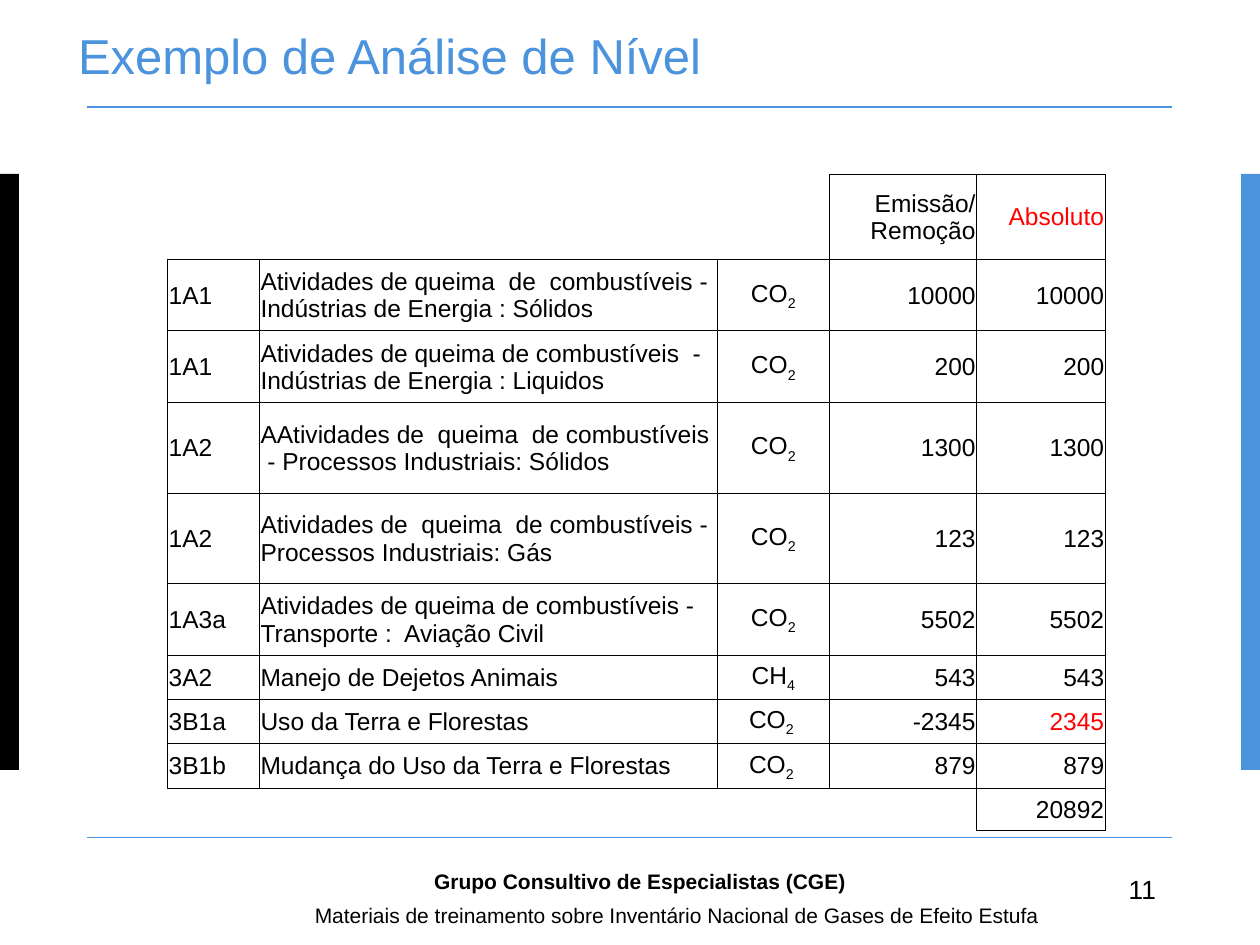
from dataclasses import dataclass

from lxml import etree
from pptx import Presentation
from pptx import util as u
from pptx.dml.color import RGBColor
from pptx.enum import shapes, text
from pptx.oxml import ns

Pt = u.Pt
LEFT, MID, RIGHT = text.PP_ALIGN.LEFT, text.PP_ALIGN.CENTER, text.PP_ALIGN.RIGHT


@dataclass(frozen=True)
class Theme:
    font: str = "Arial"
    blue: str = "4B93DC"
    black: str = "000000"
    red: str = "FF0000"
    title: int = 28
    page: int = 15
    body: int = 14
    foot: int = 12


T = Theme()
COLS = [52.5, 261.5, 64.5, 84, 73.5]
ROWS = [48.4, 41, 41, 51.7, 51.7, 41, 25.3, 25.3, 25.3, 24]
DATA = [
    ("1A1 ", "Atividades de queima  de  combustíveis - Indústrias de Energia : Sólidos", "CO", "2", 10000),
    ("1A1 ", "Atividades de queima de combustíveis  - Indústrias de Energia : Liquidos", "CO", "2", 200),
    ("1A2 ", "AAtividades de  queima  de combustíveis  - Processos Industriais: Sólidos", "CO", "2", 1300),
    ("1A2 ", "Atividades de  queima  de combustíveis - Processos Industriais: Gás", "CO", "2", 123),
    ("1A3a ", "Atividades de queima de combustíveis -  Transporte :  Aviação Civil", "CO", "2", 5502),
    ("3A2 ", "Manejo de Dejetos Animais", "CH", "4", 543),
    ("3B1a ", "Uso da Terra e Florestas", "CO", "2 ", -2345),
    ("3B1b ", "Mudança do Uso da Terra e Florestas", "CO", "2 ", 879),
]


def say(frame, words, size=T.body, color=T.black, bold=False, align=LEFT, sub="", lead=None):
    para = frame.paragraphs[0]
    para.alignment = align
    if lead:
        para.line_spacing = Pt(lead)
    for part in filter(None, (words, sub)):
        run = para.add_run()
        run.text = part
        run.font.name, run.font.size, run.font.bold = T.font, Pt(size), bold
        run.font.color.rgb = RGBColor.from_string(color)
    if sub:
        run.font._element.set("baseline", "-25000")


def add_bar(slide, x, color):
    bar = slide.shapes.add_shape(shapes.MSO_SHAPE.RECTANGLE, Pt(x), Pt(99.4), Pt(10.8), Pt(340.6))
    bar.shadow.inherit = False
    bar.fill.solid()
    bar.fill.fore_color.rgb = RGBColor.from_string(color)
    bar.line.fill.background()


def add_rule(slide, y):
    rule = slide.shapes.add_connector(shapes.MSO_CONNECTOR.STRAIGHT, Pt(49.7), Pt(y), Pt(669.6), Pt(y))
    rule.line.color.rgb = RGBColor.from_string(T.blue)
    rule.line.width = Pt(1)
    etree.SubElement(rule._element.spPr, ns.qn("a:effectLst"))


def add_note(slide, box, words, **style):
    frame = slide.shapes.add_textbox(*map(Pt, box)).text_frame
    frame.word_wrap = True
    say(frame, words, **style)


def set_edge(cell, side, shown):
    props = cell._tc.get_or_add_tcPr()
    edge = etree.SubElement(props, ns.qn("a:ln" + side), w=str(Pt(0.5)))
    if shown:
        fill = etree.SubElement(edge, ns.qn("a:solidFill"))
        etree.SubElement(fill, ns.qn("a:srgbClr"), val=T.black)
    else:
        etree.SubElement(edge, ns.qn("a:noFill"))


def list_cells():
    cells = {
        (0, 3): dict(words="Emissão/ Remoção", align=RIGHT),
        (0, 4): dict(words="Absoluto", align=RIGHT, color=T.red),
    }
    for row, (code, name, gas, sub, value) in enumerate(DATA, 1):
        cells[row, 0] = dict(words=code)
        cells[row, 1] = dict(words=name)
        cells[row, 2] = dict(words=gas, sub=sub, align=MID)
        cells[row, 3] = dict(words=str(value), align=RIGHT)
        cells[row, 4] = dict(words=str(abs(value)), align=RIGHT, color=T.red if value < 0 else T.black)
    total = sum(abs(item[-1]) for item in DATA)
    cells[len(DATA) + 1, 4] = dict(words=str(total), align=RIGHT)
    return cells


def add_grid(slide):
    size = Pt(sum(COLS)), Pt(sum(ROWS))
    grid = slide.shapes.add_table(len(ROWS), len(COLS), Pt(95.7), Pt(99.7), *size).table
    grid.first_row = grid.horz_banding = False
    for col, width in zip(grid.columns, COLS):
        col.width = Pt(width)
    for row, height in zip(grid.rows, ROWS):
        row.height = Pt(height)
    cells = list_cells()
    for r in range(len(ROWS)):
        for c in range(len(COLS)):
            cell = grid.cell(r, c)
            cell.margin_left = cell.margin_right = cell.margin_top = Pt(0.7)
            cell.margin_bottom = 0
            cell.vertical_anchor = text.MSO_ANCHOR.MIDDLE
            near = {"L": (r, c - 1), "R": (r, c + 1), "T": (r - 1, c), "B": (r + 1, c)}
            for side, other in near.items():
                set_edge(cell, side, (r, c) in cells or other in cells)
            cell.fill.background()
            if (r, c) in cells:
                say(cell.text_frame, **cells[r, c])


def set_title(slide, words):
    title = slide.shapes.title
    title.left, title.top, title.width, title.height = map(Pt, (44.6, 20.9, 623.5, 39.6))
    frame = title.text_frame
    frame.margin_left = frame.margin_right = frame.margin_top = frame.margin_bottom = 0
    frame.vertical_anchor = text.MSO_ANCHOR.MIDDLE
    frame.auto_size = text.MSO_AUTO_SIZE.NONE
    say(frame, words, size=T.title, color=T.blue, lead=15)


def main():
    deck = Presentation()
    deck.slide_width, deck.slide_height = Pt(720), Pt(540)
    slide = deck.slides.add_slide(deck.slide_layouts[5])
    add_bar(slide, 0, T.black)
    add_bar(slide, 709.2, T.blue)
    for y in (61.2, 478.6):
        add_rule(slide, y)
    add_grid(slide)
    set_title(slide, "Exemplo de Análise de Nível")
    add_note(slide, (637.9, 495.4, 33.8, 25.2), "11", size=T.page)
    add_note(slide, (172.8, 512, 446.4, 8.6),
             "Materiais de treinamento sobre Inventário Nacional de Gases de Efeito Estufa", size=T.foot)
    add_note(slide, (241, 493, 260.6, 19.4), "Grupo Consultivo de Especialistas (CGE)",
             size=T.foot, bold=True)
    deck.save("out.pptx")


if __name__ == "__main__":
    main()
